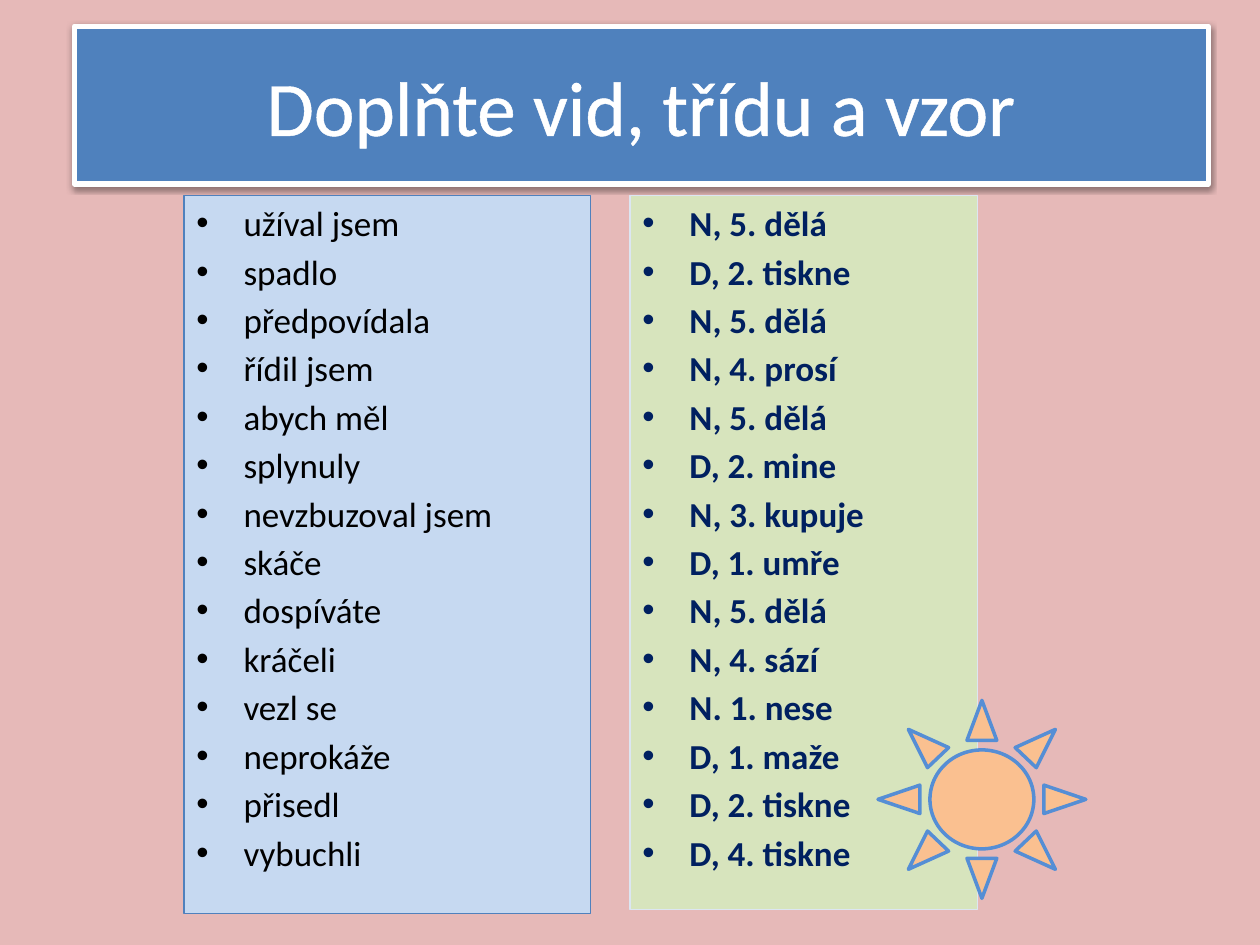
from lxml import etree
from pptx import Presentation
from pptx.dml.color import RGBColor
from pptx.enum.shapes import MSO_SHAPE
from pptx.enum.text import MSO_ANCHOR, PP_ALIGN
from pptx.oxml import parse_xml
from pptx.oxml.ns import nsdecls, qn
from pptx.util import Cm, Pt

SUN = MSO_SHAPE.SUN
MIDDLE = MSO_ANCHOR.MIDDLE
CENTER = PP_ALIGN.CENTER
FONT = "Calibri"

COLORS = {
    "background": "E6B9B8",
    "blue": "4F81BD",
    "white": "FFFFFF",
    "verbs": "C6D9F1",
    "verb_text": "000000",
    "answers": "D7E4BD",
    "answer_line": "DCE6F2",
    "answer_text": "002060",
    "sun": "FAC090",
    "sun_line": "558ED5",
}

TITLE = "Doplňte vid, třídu a vzor"
EXERCISE = [
    ("užíval jsem", "N, 5. dělá"),
    ("spadlo", "D, 2. tiskne"),
    ("předpovídala", "N, 5. dělá"),
    ("řídil jsem", "N, 4. prosí"),
    ("abych měl", "N, 5. dělá"),
    ("splynuly", "D, 2. mine"),
    ("nevzbuzoval jsem", "N, 3. kupuje"),
    ("skáče", "D, 1. umře"),
    ("dospíváte", "N, 5. dělá"),
    ("kráčeli", "N, 4. sází"),
    ("vezl se", "N. 1. nese"),
    ("neprokáže", "D, 1. maže"),
    ("přisedl", "D, 2. tiskne"),
    ("vybuchli", "D, 4. tiskne"),
]
VERBS, ANSWERS = zip(*EXERCISE)
COLUMN_TOP = 3.94
COLUMNS = [
    (VERBS, 3.71, 8.2, 14.48, "verbs", "blue", "verb_text", False),
    (ANSWERS, 12.7, 7.01, 14.4, "answers", "answer_line", "answer_text", True),
]


def color(name):
    return RGBColor.from_string(COLORS[name])


def paint(shape, fill, line, width):
    shape.fill.solid()
    shape.fill.fore_color.rgb = color(fill)
    shape.line.color.rgb = color(line)
    shape.line.width = Pt(width)


def add_box(slide, left, top, width, height, fill, line, line_width):
    box = slide.shapes.add_textbox(Cm(left), Cm(top), Cm(width), Cm(height))
    box.text_frame.word_wrap = True
    paint(box, fill, line, line_width)
    return box


def style_font(font, size, name, bold=False):
    font.name = FONT
    font.size = Pt(size)
    font.bold = bold
    font.color.rgb = color(name)


def add_title(slide):
    box = add_box(slide, 1.5, 0.53, 22.86, 3.18, "blue", "white", 3)
    box.text_frame.text = TITLE
    box.text_frame.vertical_anchor = MIDDLE
    paragraph = box.text_frame.paragraphs[0]
    paragraph.alignment = CENTER
    run = paragraph.runs[0]
    style_font(run.font, 44, "white")
    run.font._element.insert(0, parse_xml(
        f'<a:ln {nsdecls("a")} w="{Pt(1.45)}"><a:solidFill>'
        f'<a:srgbClr val="{COLORS["white"]}"/></a:solidFill></a:ln>'))
    box._element.spPr.append(parse_xml(
        f'<a:effectLst {nsdecls("a")}><a:outerShdw blurRad="{Pt(3.1)}" '
        f'dist="{Pt(1.6)}" dir="5400000" rotWithShape="0">'
        '<a:srgbClr val="000000"><a:alpha val="38000"/></a:srgbClr>'
        '</a:outerShdw></a:effectLst>'))


def add_column(slide, lines, left, width, height, fill, line, text, bold):
    box = add_box(slide, left, COLUMN_TOP, width, height, fill, line, 0.75)
    box.text_frame.text = "\n".join(lines)
    for index, paragraph in enumerate(box.text_frame.paragraphs):
        properties = paragraph._p.get_or_add_pPr()
        properties.set("marL", str(Cm(0.95)))
        properties.set("indent", str(-Cm(0.95)))
        etree.SubElement(properties, qn("a:buFont"), typeface="Arial")
        etree.SubElement(properties, qn("a:buChar"), char="•")
        paragraph.space_before = Pt(3.65 if index else 0)
        style_font(paragraph.runs[0].font, 20, text, bold)


def add_sun(slide):
    sun = slide.shapes.add_shape(SUN, Cm(17.7), Cm(14.12), Cm(4.19), Cm(3.99))
    sun.shadow.inherit = False
    paint(sun, "sun", "sun_line", 2)


def main():
    presentation = Presentation()
    presentation.slide_width = Cm(25.4)
    presentation.slide_height = Cm(19.05)
    slide = presentation.slides.add_slide(presentation.slide_layouts[6])
    slide.background.fill.solid()
    slide.background.fill.fore_color.rgb = color("background")
    add_title(slide)
    for column in COLUMNS:
        add_column(slide, *column)
    add_sun(slide)
    presentation.save("out.pptx")


if __name__ == "__main__":
    main()
